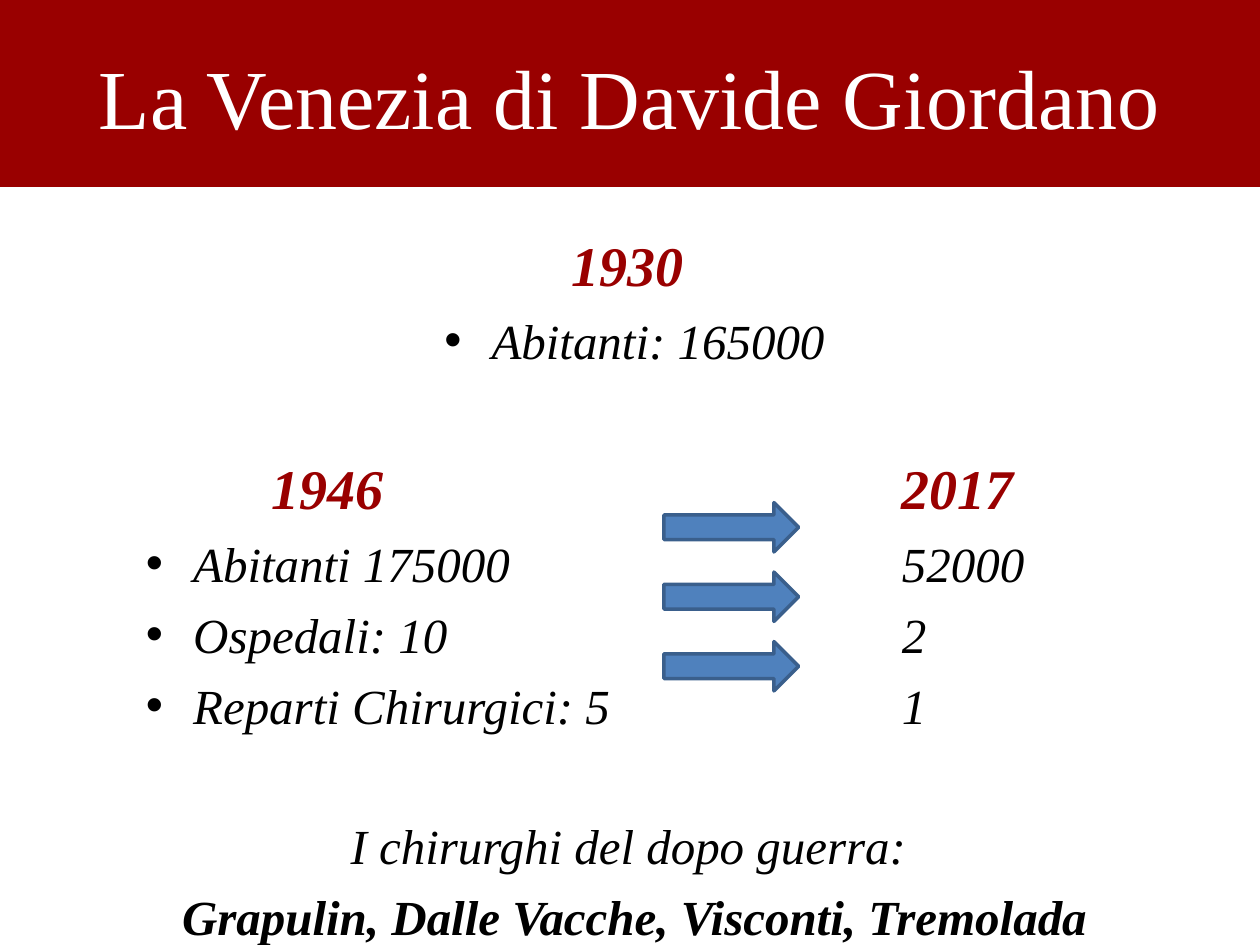
from pptx import Presentation
from pptx.dml.color import RGBColor
from pptx.enum.shapes import MSO_SHAPE as Shape
from pptx.enum.text import MSO_ANCHOR as Anchor, PP_ALIGN as Align
from pptx.oxml.ns import qn
from pptx.util import Pt
from lxml.etree import SubElement as Sub

RED = RGBColor(0x99, 0x00, 0x00)
BLUE = RGBColor(0x4F, 0x81, 0xBD)
NAVY = RGBColor(0x3A, 0x5F, 0x8C)
WHITE = RGBColor(0xFF, 0xFF, 0xFF)
BLACK = RGBColor(0x00, 0x00, 0x00)

YEAR = {"size": Pt(32), "bold": True, "italic": True}
ITEM = {"size": Pt(28), "bold": False, "italic": True}
NAMES = {"size": Pt(28), "bold": True, "italic": True}
TITLE = {"size": Pt(48)}


class Deck:
    font = "Times New Roman"
    hang = Pt(27)
    stops = (Pt(72), Pt(432))

    def __init__(self, wide, high):
        self.file = Presentation()
        self.file.slide_width, self.file.slide_height = Pt(wide), Pt(high)
        self.slide = self.file.slides.add_slide(self.file.slide_layouts[6])

    def shape(self, kind, box, fill, line):
        item = self.slide.shapes.add_shape(kind, *map(Pt, box))
        item.shadow.inherit = False
        item.fill.solid()
        item.fill.fore_color.rgb = fill
        item.line.color.rgb = line
        item.line.width = Pt(2)

    def text(self, box, rows, anchor=Anchor.TOP):
        frame = self.slide.shapes.add_textbox(*map(Pt, box)).text_frame
        frame.word_wrap = True
        frame.vertical_anchor = anchor
        for i, row in enumerate(rows):
            para = frame.add_paragraph() if i else frame.paragraphs[0]
            self.para(para, *row)

    def para(self, para, words, form, color, align, gap, dot=False):
        para.alignment = align
        para.space_before = Pt(gap)
        run = para.add_run()
        run.text = words
        run.font.name = self.font
        run.font.color.rgb = color
        for key, value in form.items():
            setattr(run.font, key, value)
        props = para._p.get_or_add_pPr()
        if dot:
            props.set("marL", str(self.hang))
            props.set("indent", str(-self.hang))
            Sub(props, qn("a:buFont"), typeface="Arial")
            Sub(props, qn("a:buChar"), char="•")
        if "\t" in words:
            tabs = Sub(props, qn("a:tabLst"))
            for stop in self.stops:
                Sub(tabs, qn("a:tab"), pos=str(stop), algn="l")


def main():
    deck = Deck(720, 540)
    mid, left = Align.CENTER, Align.LEFT
    deck.text((76.3, 128.2, 572.4, 396.7), [
        ("1930 ", YEAR, RED, mid, 4),
        ("Abitanti: 165000", ITEM, BLACK, mid, 7, True),
        ("\t1946\t2017", YEAR, RED, left, 48.5),
        ("Abitanti 175000\t52000", ITEM, BLACK, left, 7, True),
        ("Ospedali: 10\t2", ITEM, BLACK, left, 7, True),
        ("Reparti Chirurgici: 5\t1", ITEM, BLACK, left, 7, True),
        ("I chirurghi del dopo guerra: ", ITEM, BLACK, mid, 46.5),
        ("Grapulin, Dalle Vacche, Visconti, Tremolada",
         NAMES, BLACK, mid, 7),
    ])
    deck.shape(Shape.RECTANGLE, (0, 0, 720, 106), RED, RED)
    deck.text((36, 10, 648, 90), [
        ("La Venezia di Davide Giordano", TITLE, WHITE, mid, 0),
    ], Anchor.MIDDLE)
    for i in range(3):
        box = (379.4, 287.2 + 39.7 * i, 77, 28.2)
        deck.shape(Shape.RIGHT_ARROW, box, BLUE, NAVY)
    deck.file.save("out.pptx")


if __name__ == "__main__":
    main()
